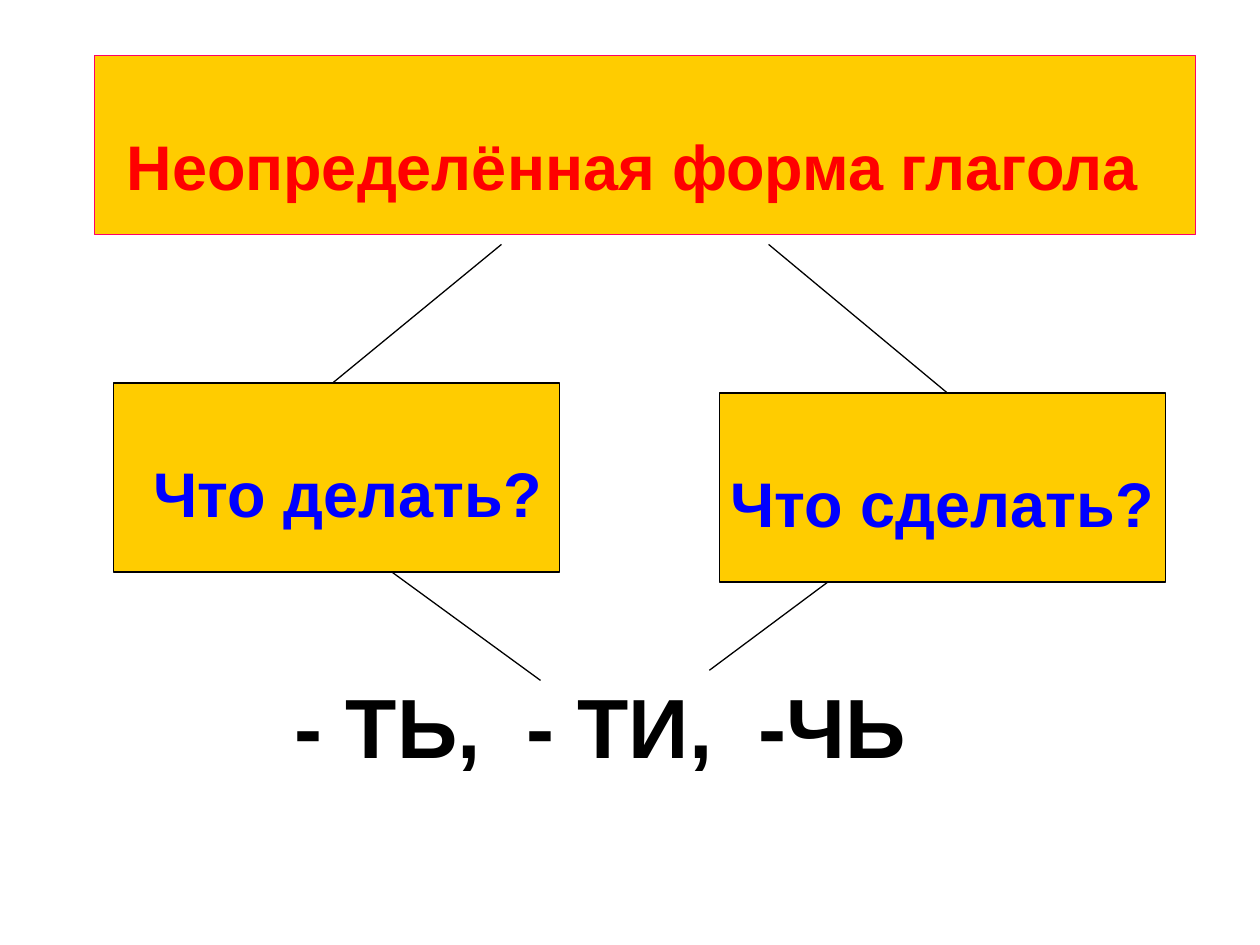
from lxml import etree
from pptx import Presentation
from pptx import util as u
from pptx.dml.color import RGBColor
from pptx.enum import shapes, text
from pptx.oxml.ns import qn

COLORS = {"box": "FFCC00", "title_edge": "FF0066", "title": "FF0000",
          "question": "0000FF", "ink": "000000"}
FONT = "Arial"

# Content: boxes are left, top, width, height in inches
TITLE = "Неопределённая форма глагола"
TITLE_BOX = (0.75, 0.44, 8.74, 1.42)
TITLE_TEXT_BOX = (0.98, 0.91, 8.08, 0.68)
QUESTIONS = [  # wording, box, text left
    ("Что делать?", (0.9, 3.04, 3.54, 1.5), 1.22),
    ("Что сделать?", (5.71, 3.12, 3.54, 1.5), 5.94),
]
QUESTION_TEXT_DROP = 0.47
QUESTION_TEXT_SIZE = (3.08, 0.68)
ENDINGS = ["- ТЬ,", "- ТИ,", "-ЧЬ"]
ENDINGS_BOX = (2.24, 5.25, 5.75, 0.9)
ENDING_STEP = 1.84
LINES = [  # from x, y to x, y
    (3.98, 1.94, 2.64, 3.04),
    (6.1, 1.94, 7.52, 3.12),
    (3.11, 4.54, 4.29, 5.4),
    (6.57, 4.62, 5.63, 5.32),
]


def color(name):
    return RGBColor.from_string(COLORS[name])


def inches(values):
    return [u.Inches(value) for value in values]


def add_box(slide, box, edge):
    shape = slide.shapes.add_shape(shapes.MSO_SHAPE.RECTANGLE, *inches(box))
    shape.shadow.inherit = False
    shape.fill.solid()
    shape.fill.fore_color.rgb = color("box")
    shape.line.color.rgb = color(edge)
    shape.line.width = u.Pt(0.75)


def write(shape, wording, size, name, align, side=0, wrap=False):
    frame = shape.text_frame
    frame.word_wrap = wrap
    frame.auto_size = text.MSO_AUTO_SIZE.NONE
    frame.vertical_anchor = text.MSO_ANCHOR.TOP
    frame.margin_left = frame.margin_right = u.Inches(side)
    frame.margin_top, frame.margin_bottom = u.Inches(0.1), 0
    paragraph = frame.paragraphs[0]
    paragraph.text = wording
    paragraph.alignment = align
    paragraph.space_before = u.Pt(0)
    if "\t" in wording:
        tabs = etree.SubElement(paragraph._p.get_or_add_pPr(), qn("a:tabLst"))
        for index in range(1, len(ENDINGS)):
            etree.SubElement(tabs, qn("a:tab"), algn="l",
                             pos=str(u.Inches(index * ENDING_STEP)))
    font = paragraph.font
    font.name, font.size, font.bold = FONT, u.Pt(size), True
    font.color.rgb = color(name)


def add_line(slide, ends):
    line = slide.shapes.add_connector(shapes.MSO_CONNECTOR.STRAIGHT, *inches(ends))
    line.line.color.rgb = color("ink")
    line.line.width = u.Pt(0.75)
    etree.SubElement(line._element.spPr, qn("a:effectLst"))


def main():
    presentation = Presentation()
    presentation.slide_width, presentation.slide_height = inches((10, 7.5))
    slide = presentation.slides.add_slide(presentation.slide_layouts[5])
    center = text.PP_ALIGN.CENTER

    # Title on its box, brought in front of it
    add_box(slide, TITLE_BOX, "title_edge")
    title = slide.shapes.title
    title.left, title.top, title.width, title.height = inches(TITLE_TEXT_BOX)
    write(title, TITLE, 36, "title", center)
    slide.shapes._spTree.append(title._element)

    # Questions
    for wording, box, left in QUESTIONS:
        add_box(slide, box, "ink")
        place = (left, box[1] + QUESTION_TEXT_DROP, *QUESTION_TEXT_SIZE)
        write(slide.shapes.add_textbox(*inches(place)), wording, 36, "question", center)

    # Verb endings, spaced by tab stops
    endings = slide.shapes.add_textbox(*inches(ENDINGS_BOX))
    write(endings, "\t".join(ENDINGS), 48, "ink", text.PP_ALIGN.LEFT, side=0.1, wrap=True)

    # Branches
    for ends in LINES:
        add_line(slide, ends)

    presentation.save("out.pptx")


if __name__ == "__main__":
    main()
